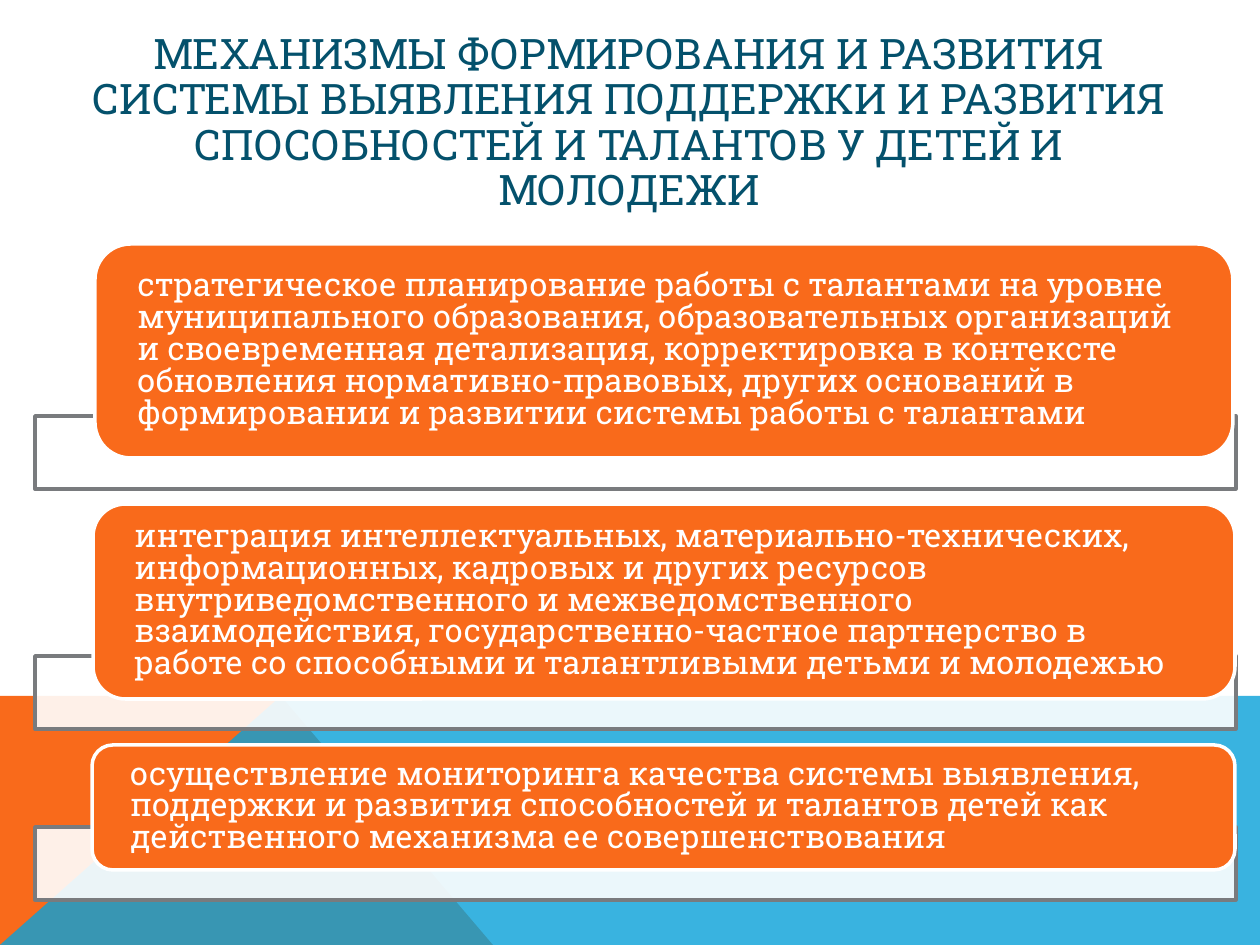
"""Build the slide on ways to support talented children and youth."""
from lxml import etree
from pptx import Presentation
from pptx import util as u
from pptx.dml.color import RGBColor
from pptx.enum import shapes, text
from pptx.oxml.ns import qn

PX = 7257
FONT = "Roboto Slab"
WHITE, ORANGE, GREY, BLUE, NAVY = "FFFFFF", "F96A1B", "797B7E", "08A1D9", "04516C"


def rgb(code):
    return RGBColor.from_string(code)


def paint(shape, fill, line=None, alpha=100):
    shape.shadow.inherit = False
    shape.fill.solid()
    shape.fill.fore_color.rgb = rgb(fill)
    if alpha < 100:
        tint = shape.fill._xPr.find(".//" + qn("a:srgbClr"))
        etree.SubElement(tint, qn("a:alpha"), val=str(alpha * 1000))
    if line:
        shape.line.color.rgb = rgb(line)
        shape.line.width = u.Pt(2)
    else:
        shape.line.fill.background()


prs = Presentation()
prs.slide_width, prs.slide_height = 1260 * PX, 945 * PX
slide = prs.slides.add_slide(prs.slide_layouts[5])
tree = slide.shapes

wedges = [
    ([(0, 945), (0, 696), (281, 696), (493, 945)], ORANGE, 100),
    ([(0, 945), (281, 696), (1260, 696), (1260, 945)], BLUE, 80),
]
for points, fill, alpha in wedges:
    pen = tree.build_freeform(*points[0], scale=PX)
    pen.add_line_segments(points[1:], close=True)
    paint(pen.convert_to_shape(), fill, alpha=alpha)

title = tree.title
title.left, title.top, title.width, title.height = [n * PX for n in (54, 86, 1150, 76)]
frame = title.text_frame
frame.text = ("МЕХАНИЗМЫ ФОРМИРОВАНИЯ И РАЗВИТИЯ СИСТЕМЫ ВЫЯВЛЕНИЯ ПОДДЕРЖКИ "
              "И РАЗВИТИЯ СПОСОБНОСТЕЙ И ТАЛАНТОВ У ДЕТЕЙ И МОЛОДЕЖИ")
frame.word_wrap = True
frame.auto_size = text.MSO_AUTO_SIZE.NONE
frame.vertical_anchor = text.MSO_ANCHOR.MIDDLE
head = frame.paragraphs[0]
head.alignment = text.PP_ALIGN.CENTER
head.line_spacing = 0.9
head.font.name, head.font.size = FONT, u.Pt(24)
head.font.color.rgb = rgb(NAVY)

items = [
    (416, (95, 244, 1138, 214),
     "стратегическое планирование работы с талантами на уровне муниципального "
     "образования, образовательных организаций и своевременная детализация, "
     "корректировка в контексте обновления нормативно-правовых, других оснований "
     "в формировании и развитии системы работы с талантами"),
    (656, (93, 504, 1142, 195),
     "интеграция интеллектуальных, материально-технических, информационных, "
     "кадровых и других ресурсов внутриведомственного и межведомственного "
     "взаимодействия, государственно-частное партнерство в работе со способными "
     "и талантливыми детьми и молодежью"),
    (827, (92, 745, 1143, 125),
     "осуществление мониторинга качества системы выявления, поддержки и развития "
     "способностей и талантов детей как действенного механизма ее "
     "совершенствования"),
]
for top, box, words in items:
    bar = tree.add_shape(shapes.MSO_SHAPE.RECTANGLE, 35 * PX, top * PX, 1201 * PX, 73 * PX)
    paint(bar, WHITE, GREY, 90)
    card = tree.add_shape(shapes.MSO_SHAPE.ROUNDED_RECTANGLE, *[n * PX for n in box])
    paint(card, ORANGE, WHITE)
    frame = card.text_frame
    frame.text = words
    frame.word_wrap = True
    frame.vertical_anchor = text.MSO_ANCHOR.MIDDLE
    frame.margin_left = frame.margin_right = 32 * PX
    frame.margin_top = frame.margin_bottom = 0
    para = frame.paragraphs[0]
    para.alignment = text.PP_ALIGN.LEFT
    para.line_spacing = 0.82
    para.font.name, para.font.size = FONT, u.Pt(18.5)
    para.font.color.rgb = rgb(WHITE)

prs.save("out.pptx")
